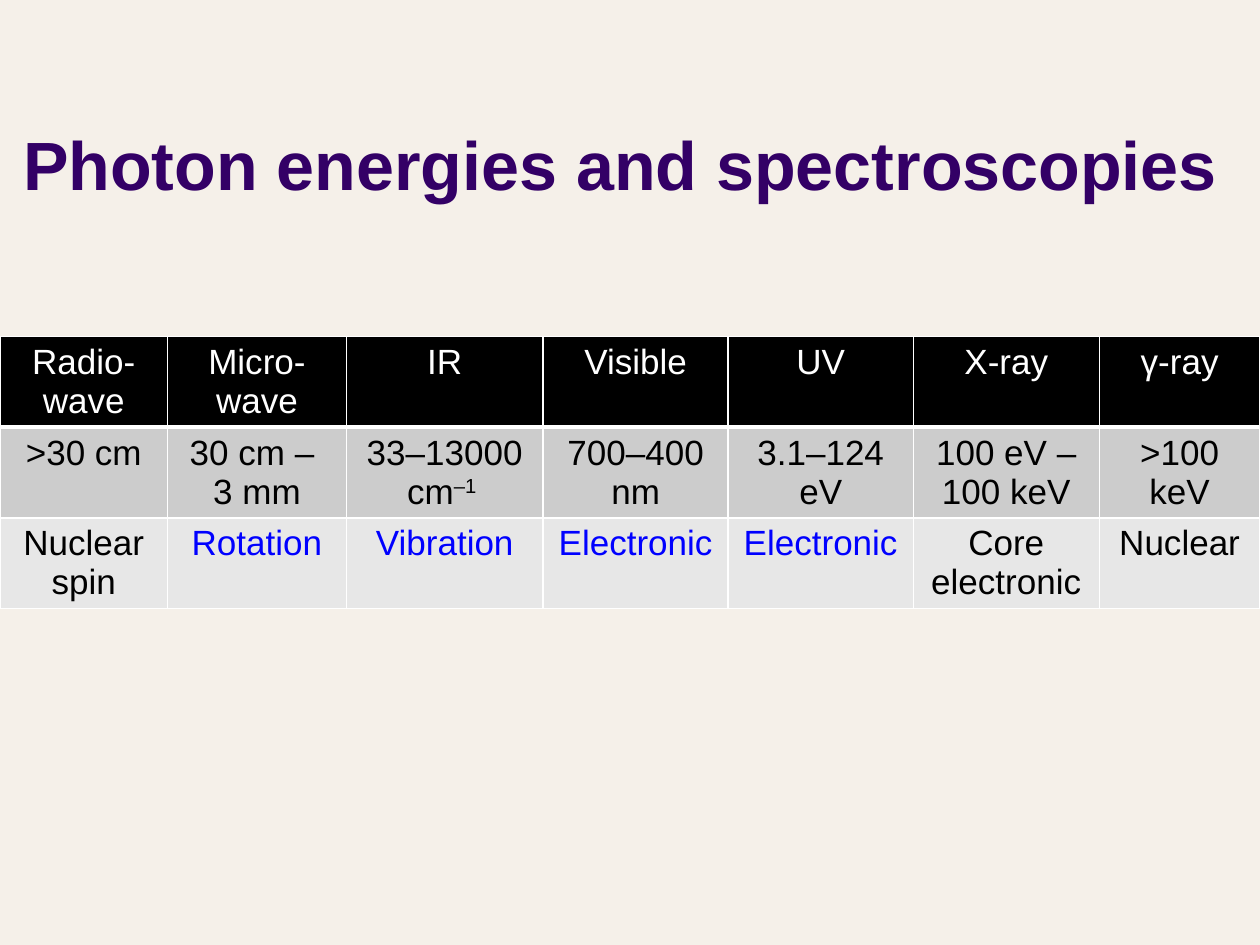
from lxml.etree import SubElement
from pptx import Presentation
from pptx.dml.color import RGBColor
from pptx.enum.text import MSO_ANCHOR, MSO_AUTO_SIZE, PP_ALIGN
from pptx.oxml.ns import qn
from pptx.util import Cm, Pt

FONT = "Arial"
CREAM = RGBColor(0xF5, 0xF0, 0xE9)
PURPLE = RGBColor(0x33, 0x00, 0x66)
BLACK = RGBColor(0x00, 0x00, 0x00)
WHITE = RGBColor(0xFF, 0xFF, 0xFF)
BLUE = RGBColor(0x00, 0x00, 0xFF)
MID_GREY = RGBColor(0xCC, 0xCC, 0xCC)
LIGHT_GREY = RGBColor(0xE7, 0xE7, 0xE7)


def add_run(paragraph, text, size, color):
    run = paragraph.add_run()
    run.text = text
    run.font.name = FONT
    run.font.size = Pt(size)
    run.font.color.rgb = color
    return run


def add_border(cell, side, width):
    line = SubElement(cell._tc.get_or_add_tcPr(), qn(f"a:{side}"), w=str(Pt(width)))
    fill = SubElement(line, qn("a:solidFill"))
    SubElement(fill, qn("a:srgbClr"), val=str(WHITE))


prs = Presentation()
prs.slide_width, prs.slide_height = Cm(25.4), Cm(19.05)
slide = prs.slides.add_slide(prs.slide_layouts[5])
slide.background.fill.solid()
slide.background.fill.fore_color.rgb = CREAM

# Title
title = slide.shapes.title
title.left, title.top, title.width, title.height = Cm(0), Cm(0.64), Cm(25.4), Cm(3.6)
title.text_frame.auto_size = MSO_AUTO_SIZE.NONE
title.text_frame.vertical_anchor = MSO_ANCHOR.BOTTOM
heading = title.text_frame.paragraphs[0]
heading.alignment = PP_ALIGN.CENTER
add_run(heading, "Photon energies and spectroscopies ", 39, PURPLE).font.bold = True

# Spectral regions: region, photon range, transition probed
regions = [
    ("Radio-wave", ">30 cm", "Nuclear spin"),
    ("Micro-wave", "30 cm – \n3 mm", "Rotation"),
    ("IR", "33–13000 cm", "Vibration"),
    ("Visible", "700–400 nm", "Electronic"),
    ("UV", "3.1–124 eV", "Electronic"),
    ("X-ray", "100 eV –100 keV", "Core electronic"),
    ("γ-ray", ">100 keV", "Nuclear"),
]
highlighted = {"Rotation", "Vibration", "Electronic"}
row_fills = [BLACK, MID_GREY, LIGHT_GREY]
column_widths = [3.38, 3.6, 3.97, 3.73, 3.73, 3.75, 3.24]
row_height = 1.83

# Table
spectrum = slide.shapes.add_table(
    len(row_fills), len(regions), Cm(0), Cm(6.78),
    Cm(sum(column_widths)), Cm(row_height * len(row_fills))).table
for row in spectrum.rows:
    row.height = Cm(row_height)

for c, (region, width) in enumerate(zip(regions, column_widths)):
    spectrum.columns[c].width = Cm(width)
    for r, (text, row_fill) in enumerate(zip(region, row_fills)):
        cell = spectrum.cell(r, c)

        # A thicker rule separates the header from the body
        add_border(cell, "lnL", 1)
        add_border(cell, "lnR", 1)
        add_border(cell, "lnT", 3 if r == 1 else 1)
        add_border(cell, "lnB", 3 if r == 0 else 1)
        cell.fill.solid()
        cell.fill.fore_color.rgb = row_fill

        color = WHITE if r == 0 else BLUE if text in highlighted else BLACK
        paragraph = cell.text_frame.paragraphs[0]
        paragraph.alignment = PP_ALIGN.CENTER
        for n, part in enumerate(text.split("\n")):
            if n:
                paragraph.add_line_break()
            add_run(paragraph, part, 20, color).font.bold = False

# Wavenumber exponent in the IR column
exponent = add_run(spectrum.cell(1, 2).text_frame.paragraphs[0], "–1 ", 20, BLACK)
exponent.font.bold = False
exponent.font._element.set("baseline", "30000")

prs.save("out.pptx")
